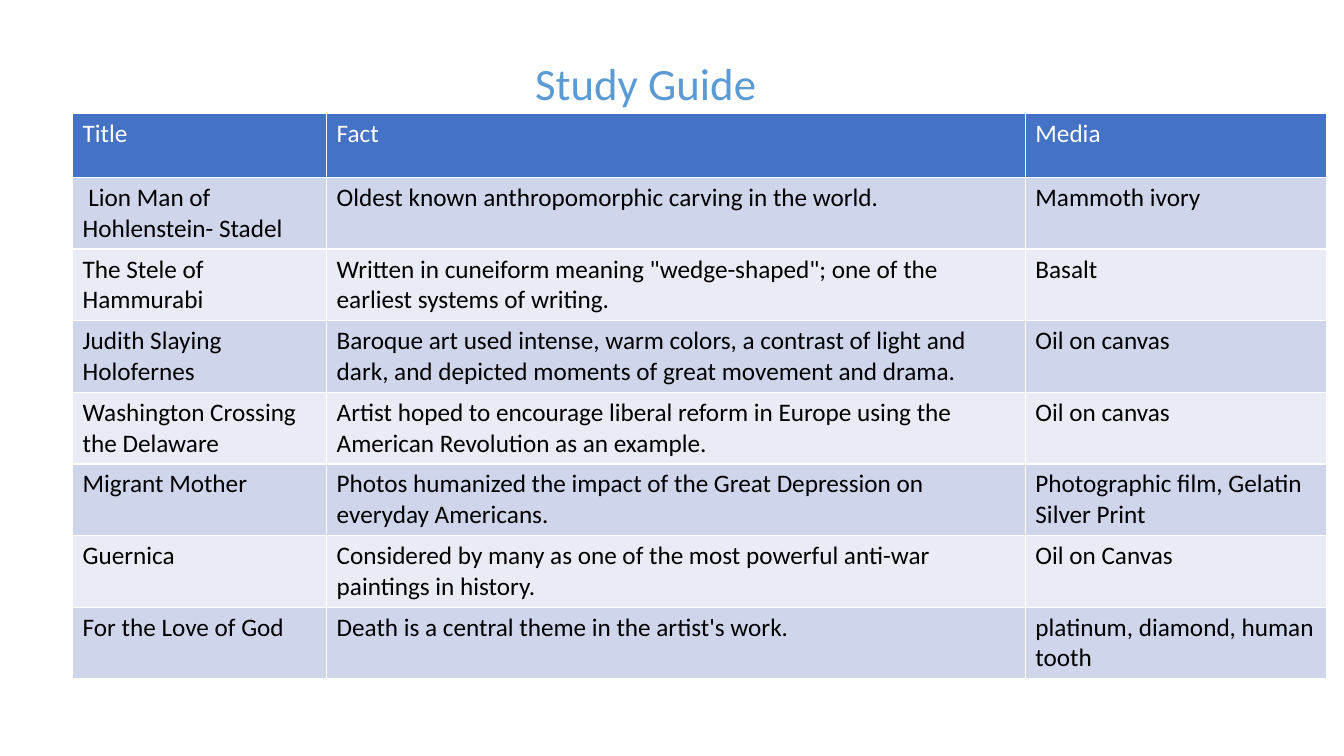
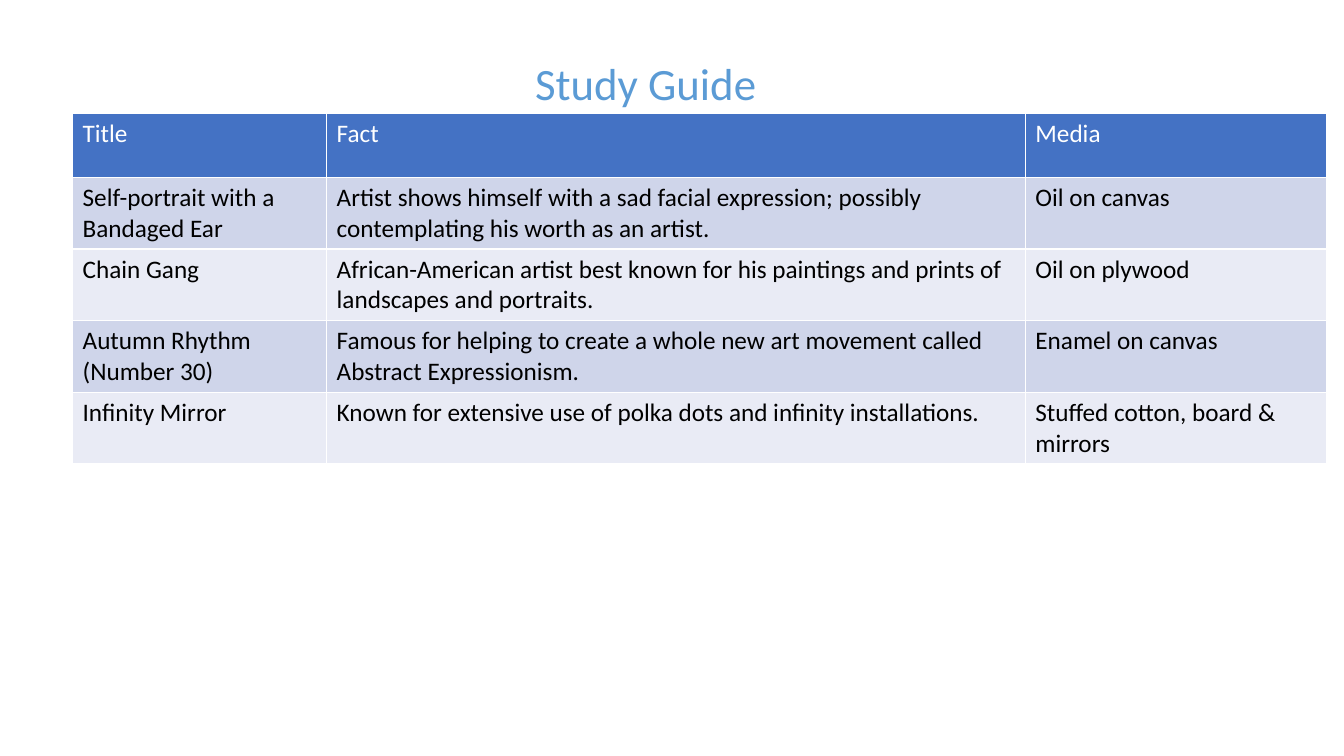
from lxml import etree
from pptx import Presentation
from pptx import util as u
from pptx.dml.color import RGBColor
from pptx.enum import text
from pptx.oxml import ns

HEADER = ["Title", "Fact", "Media"]
COLUMN_WIDTHS = [2.52, 6.93, 2.99]

EARLIER_WORKS = [
    [" Lion Man of Hohlenstein- Stadel",
     "Oldest known anthropomorphic carving in the world.",
     "Mammoth ivory"],
    ["The Stele of Hammurabi",
     'Written in cuneiform meaning "wedge-shaped"; one of the earliest systems of writing.',
     "Basalt"],
    ["Judith Slaying Holofernes",
     "Baroque art used intense, warm colors, a contrast of light and dark, "
     "and depicted moments of great movement and drama.",
     "Oil on canvas"],
    ["Washington Crossing the Delaware",
     "Artist hoped to encourage liberal reform in Europe using the American Revolution "
     "as an example.",
     "Oil on canvas"],
    ["Migrant Mother",
     "Photos humanized the impact of the Great Depression on everyday Americans.",
     "Photographic film, Gelatin Silver Print"],
    ["Guernica",
     "Considered by many as one of the most powerful anti-war paintings in history.",
     "Oil on Canvas"],
    ["For the Love of God",
     "Death is a central theme in the artist's work.",
     "platinum, diamond, human tooth"],
]

LATER_WORKS = [
    ["Self-portrait with a Bandaged Ear",
     "Artist shows himself with a sad facial expression; possibly contemplating "
     "his worth as an artist.",
     "Oil on canvas"],
    ["Chain Gang",
     "African-American artist best known for his paintings and prints of landscapes "
     "and portraits.",
     "Oil on plywood"],
    ["Autumn Rhythm (Number 30)",
     "Famous for helping to create a whole new art movement called Abstract Expressionism.",
     "Enamel on canvas"],
    ["Infinity Mirror",
     "Known for extensive use of polka dots and infinity installations.",
     "Stuffed cotton, board & mirrors"],
]


def rgb(color):
    return RGBColor.from_string(color)


class Deck:
    FONT = "Calibri"
    TITLE = "5B9BD5"
    HEADER_FILL = "4472C4"
    BANDS = ["CFD5EA", "E9EBF5"]
    WHITE = "FFFFFF"
    BLACK = "000000"

    def __init__(self):
        self.prs = Presentation()
        self.prs.slide_width = u.Inches(13.33)
        self.prs.slide_height = u.Inches(7.5)
        self.s = None

    def add_slide(self):
        self.s = self.prs.slides.add_slide(self.prs.slide_layouts[5])

    def style(self, p, size, color):
        p.font.name = self.FONT
        p.font.size = u.Pt(size)
        p.font.bold = False
        p.font.color.rgb = rgb(color)

    def title(self, words):
        sp = self.s.shapes.title
        sp.left, sp.top = u.Inches(2.77), u.Inches(0.5)
        sp.width, sp.height = u.Inches(7.27), u.Inches(0.64)
        tf = sp.text_frame
        tf.text = words
        tf.vertical_anchor = text.MSO_ANCHOR.TOP
        p = tf.paragraphs[0]
        p.alignment = text.PP_ALIGN.CENTER
        self.style(p, 32, self.TITLE)

    def borders(self, cell):
        tc_pr = cell._tc.get_or_add_tcPr()
        for side in "LRTB":
            ln = etree.SubElement(tc_pr, ns.qn(f"a:ln{side}"), w=str(u.Pt(1)))
            fill = etree.SubElement(ln, ns.qn("a:solidFill"))
            etree.SubElement(fill, ns.qn("a:srgbClr"), val=self.WHITE)

    def cell(self, cell, words, fill, color):
        self.borders(cell)
        cell.fill.solid()
        cell.fill.fore_color.rgb = rgb(fill)
        cell.text = words
        self.style(cell.text_frame.paragraphs[0], 18, color)

    def table(self, works, row_height):
        rows = [HEADER] + works
        heights = [0.63] + [row_height] * len(works)
        table = self.s.shapes.add_table(
            len(rows), len(HEADER), u.Inches(0.72), u.Inches(1.13),
            u.Inches(sum(COLUMN_WIDTHS)), u.Inches(sum(heights))).table
        for column, width in zip(table.columns, COLUMN_WIDTHS):
            column.width = u.Inches(width)
        for i, (row, height, words) in enumerate(zip(table.rows, heights, rows)):
            row.height = u.Inches(height)
            fill = self.BANDS[(i - 1) % 2] if i else self.HEADER_FILL
            color = self.BLACK if i else self.WHITE
            for cell, entry in zip(row.cells, words):
                self.cell(cell, entry, fill, color)


def main():
    deck = Deck()
    for works, row_height in [(EARLIER_WORKS, 0.71), (LATER_WORKS, 0.7)]:
        deck.add_slide()
        deck.title("Study Guide")
        deck.table(works, row_height)
    deck.prs.save("out.pptx")


if __name__ == "__main__":
    main()
